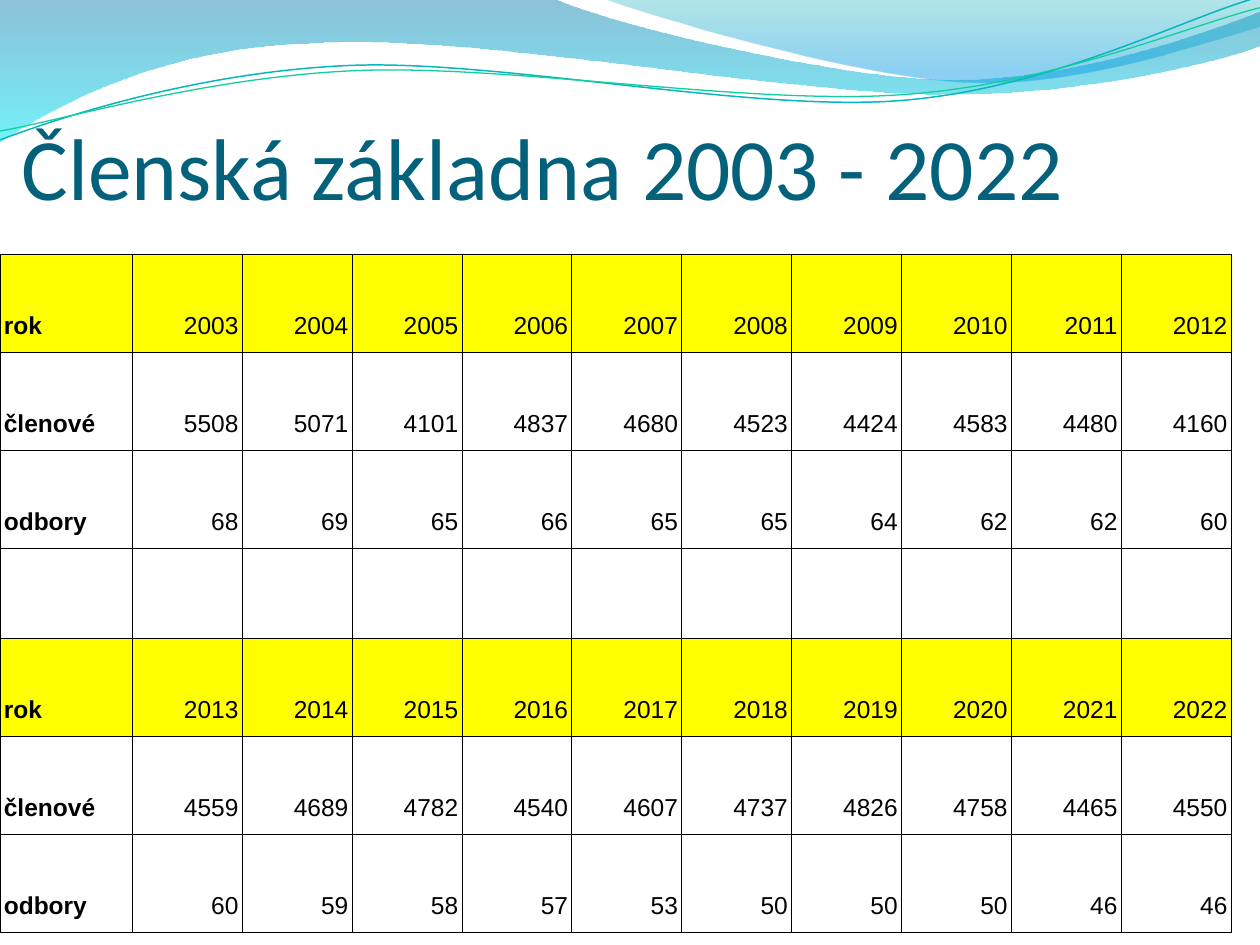
from lxml import etree
from pptx import Presentation
from pptx import util as u
from pptx.dml.color import RGBColor
from pptx.enum import text
from pptx.oxml.ns import qn

Pt = u.Pt
COLORS = {
    "title": "04617B", "text": "000000", "border": "000000", "header": "FFFF00",
    "wave_top": "0079AD", "wave_bottom": "00E9F7",
    "crest_top": "00ABB4", "crest_bottom": "0099E4",
    "teal_line": "09B6BE", "green_line": "10CF9B",
}


def rgb(name):
    return RGBColor.from_string(COLORS[name])


def add_wave(slide, segments, closed):
    """Draw lines (2 numbers) and Bezier curves (6 numbers), in points."""
    points = [(Pt(x), Pt(y)) for segment in segments
              for x, y in zip(segment[::2], segment[1::2])]
    builder = slide.shapes.build_freeform(*points[0])
    builder.add_line_segments(points[1:], close=closed)
    shape = builder.convert_to_shape()
    shape.shadow.inherit = False

    # Join the three points of each curve into one Bezier segment
    steps = iter(list(shape._element.iter(qn("a:lnTo"))))
    for segment in segments[1:]:
        first = next(steps)
        if len(segment) == 6:
            first.tag = qn("a:cubicBezTo")
            for step in (next(steps), next(steps)):
                first.append(step[0])
                step.getparent().remove(step)
    return shape


presentation = Presentation()
presentation.slide_width, presentation.slide_height = Pt(720), Pt(540)
slide = presentation.slides.add_slide(presentation.slide_layouts[6])

# Filled waves: outline, then gradient stops (position, colour, opacity in %)
filled_waves = [
    ([(0, 0), (316.8, -0.7), (342.7, 12.2, 478.1, 45.4, 545.8, 45.4),
      (614.2, 45.4, 689.8, 18.7, 720, 6.5), (720.7, 25.9),
      (707.8, 31.7, 626.4, 54.7, 537.1, 54), (447.8, 54, 275, 20.2, 185, 24.5),
      (92.9, 25.9, 33.1, 59.8, -0.7, 81.4)],
     [(0, "wave_top", 45), (1, "wave_bottom", 55)]),
    ([(344.9, -0.7), (366.5, 7.9, 491, 44.6, 553.7, 46.8),
      (616.3, 49.7, 691.9, 23, 720, 15.1), (720, 0)],
     [(0, "crest_top", 30), (0.8, "crest_bottom", 45)]),
]
for outline, stops in filled_waves:
    wave = add_wave(slide, outline, True)
    wave.line.fill.background()
    wave.fill.gradient()
    wave.fill.gradient_angle = 270
    for stop, (position, color, opacity) in zip(wave.fill.gradient_stops, stops):
        stop.position = position
        stop.color.rgb = rgb(color)
    for element, (_, _, opacity) in zip(wave._element.spPr.iter(qn("a:srgbClr")), stops):
        etree.SubElement(element, qn("a:alpha")).set("val", str(opacity * 1000))

# Thin wave lines, slightly rotated
wave_lines = [
    ([(-1.4, 63), (33.7, 51.6, 114, 29.5, 199.8, 29.9),
      (284.8, 30.3, 425.8, 67.2, 512.4, 64.8), (599, 62.4, 676.4, 25.7, 720.2, 15.5)],
     "teal_line", 0.85),
    ([(-1.1, 57.9), (33, 53.8, 118.3, 32.5, 204.1, 33),
      (290.5, 33.4, 428.9, 63.8, 515.5, 61.4), (601.4, 59.6, 678.5, 30.1, 721.4, 21.4)],
     "green_line", 0.75),
]
for curve, color, width in wave_lines:
    wave = add_wave(slide, curve, False)
    wave.rotation = 357.3
    wave.fill.background()
    wave.line.color.rgb = rgb(color)
    wave.line.width = Pt(width)

# Title
title = slide.shapes.add_textbox(Pt(12.24), Pt(34.56), Pt(691.2), Pt(90))
frame = title.text_frame
frame.word_wrap = True
frame.vertical_anchor = text.MSO_ANCHOR.BOTTOM
frame.margin_left = frame.margin_right = frame.margin_bottom = 0
frame.margin_top = Pt(3.6)
frame.text = "Členská základna 2003 - 2022"
font = frame.paragraphs[0].runs[0].font
font.name, font.size, font.color.rgb = "Calibri", Pt(50), rgb("title")

# Membership table: two decades with an empty row between them
rows = [
    ["rok", *range(2003, 2013)],
    ["členové", 5508, 5071, 4101, 4837, 4680, 4523, 4424, 4583, 4480, 4160],
    ["odbory", 68, 69, 65, 66, 65, 65, 64, 62, 62, 60],
    [""] * 11,
    ["rok", *range(2013, 2023)],
    ["členové", 4559, 4689, 4782, 4540, 4607, 4737, 4826, 4758, 4465, 4550],
    ["odbory", 60, 59, 58, 57, 53, 50, 50, 50, 46, 46],
]
label_width, year_width, row_height, gap_height = 75.7, 62.8, 56.05, 51.5
table = slide.shapes.add_table(
    len(rows), 11, 0, Pt(145.2), Pt(label_width + 10 * year_width),
    Pt(6 * row_height + gap_height)).table
table.first_row = table.horz_banding = False
for index, column in enumerate(table.columns):
    column.width = Pt(year_width if index else label_width)

for row_index, values in enumerate(rows):
    table.rows[row_index].height = Pt(row_height if values[0] else gap_height)
    for column_index, value in enumerate(values):
        cell = table.cell(row_index, column_index)

        # Borders come before the fill in the cell properties
        properties = cell._tc.get_or_add_tcPr()
        for side in ("a:lnL", "a:lnR", "a:lnT", "a:lnB"):
            border = etree.SubElement(properties, qn(side), w=str(Pt(0.67)))
            fill = etree.SubElement(border, qn("a:solidFill"))
            etree.SubElement(fill, qn("a:srgbClr"), val=COLORS["border"])
        if values[0] == "rok":
            cell.fill.solid()
            cell.fill.fore_color.rgb = rgb("header")
        else:
            cell.fill.background()

        if value == "":
            continue
        cell.vertical_anchor = text.MSO_ANCHOR.BOTTOM
        cell.margin_left = cell.margin_right = Pt(2.2)
        cell.margin_top = cell.margin_bottom = Pt(7.2)
        cell.text_frame.text = str(value)
        paragraph = cell.text_frame.paragraphs[0]
        paragraph.line_spacing = 1.15
        paragraph.alignment = text.PP_ALIGN.RIGHT if column_index else text.PP_ALIGN.LEFT
        font = paragraph.runs[0].font
        font.name, font.size, font.bold = "Arial", Pt(14), column_index == 0
        font.color.rgb = rgb("text")

presentation.save("out.pptx")
